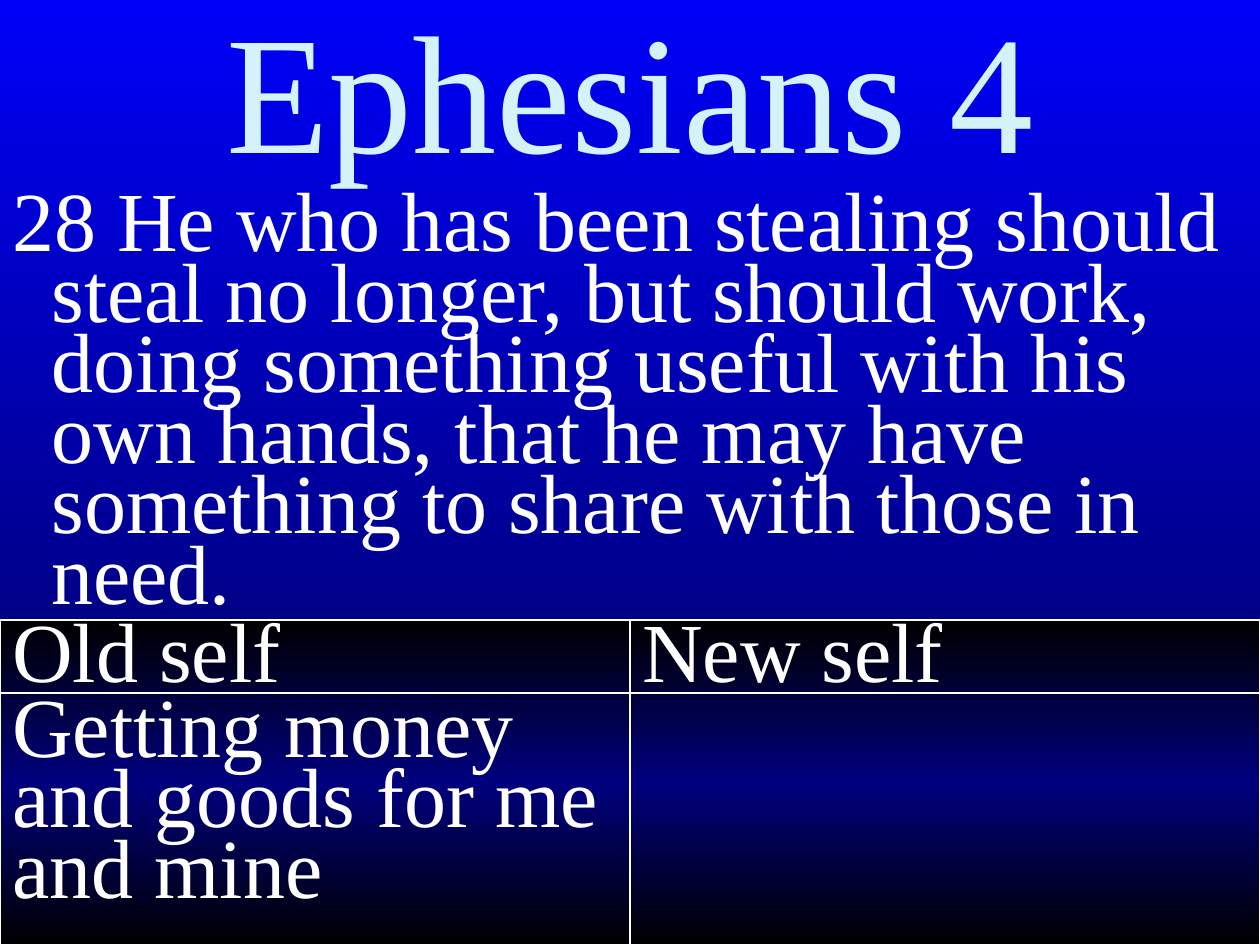
"""Build the Ephesians 4 slide comparing the old self with the new self."""
from lxml.etree import SubElement
from pptx import Presentation
from pptx.dml.color import RGBColor
from pptx.enum.shapes import MSO_CONNECTOR, MSO_SHAPE
from pptx.enum.text import MSO_ANCHOR, MSO_AUTO_SIZE, PP_ALIGN
from pptx.oxml.ns import qn
from pptx.util import Inches, Pt

COLORS = {
    "title": "D3F3F9",
    "text": "FFFFFF",
    "sky": "0000F8",
    "night": "00004A",
    "edge": "000000",
    "glow": "00007E",
}
FONT = "Times New Roman"
VERSE = (
    "28 He who has been stealing should steal no longer, but should work, "
    "doing something useful with his own hands, that he may have something "
    "to share with those in need."
)
COLUMNS = [
    ["Old self", "Getting money and goods for me and mine"],
    ["New self"],
]
COLUMN_WIDTH = 5
COLUMN_TOP = 4.92
HEADER_BOTTOM = 5.5


def color(name):
    """Return the named colour."""
    return RGBColor.from_string(COLORS[name])


def set_gradient(fill, element, names):
    """Fill from top to bottom with evenly spaced colours."""
    fill.gradient()
    fill.gradient_angle = 270
    stops = next(element.iter(qn("a:gsLst")))
    for stop in list(stops):
        stops.remove(stop)
    for index, name in enumerate(names):
        position = str(100000 * index // (len(names) - 1))
        stop = SubElement(stops, qn("a:gs"), pos=position)
        SubElement(stop, qn("a:srgbClr"), val=COLORS[name])


def write_text(shape, lines, size=48, name="text", spacing=0.7,
               align=PP_ALIGN.LEFT, anchor=MSO_ANCHOR.TOP):
    """Write one formatted paragraph per line."""
    frame = shape.text_frame
    frame.text = "\n".join(lines)
    frame.word_wrap = True
    frame.auto_size = MSO_AUTO_SIZE.NONE
    frame.vertical_anchor = anchor
    for paragraph in frame.paragraphs:
        paragraph.alignment = align
        paragraph.line_spacing = spacing
        paragraph.space_before = Pt(size * 0.05)
        for run in paragraph.runs:
            run.font.name = FONT
            run.font.size = Pt(size)
            run.font.color.rgb = color(name)


def add_title(slide, text):
    """Place and format the title."""
    title = slide.shapes.title
    title.left, title.top = Inches(0), Inches(0)
    title.width, title.height = Inches(10), Inches(1.67)
    write_text(title, [text], 96, "title", 0.8, PP_ALIGN.CENTER, MSO_ANCHOR.MIDDLE)
    title.text_frame.paragraphs[0].space_before = Pt(0)


def add_verse(slide, text):
    """Add the verse with a hanging indent."""
    box = slide.shapes.add_textbox(Inches(0), Inches(1.5), Inches(10), Inches(5.33))
    write_text(box, [text])
    properties = box.text_frame.paragraphs[0]._p.get_or_add_pPr()
    properties.set("marL", str(Inches(0.31)))
    properties.set("indent", str(-Inches(0.31)))


def add_column(slide, index, lines):
    """Add one column of the comparison."""
    column = slide.shapes.add_shape(
        MSO_SHAPE.RECTANGLE, Inches(index * COLUMN_WIDTH), Inches(COLUMN_TOP),
        Inches(COLUMN_WIDTH), Inches(7.5 - COLUMN_TOP))
    column.shadow.inherit = False
    set_gradient(column.fill, column._element, ["edge", "glow", "edge"])
    column.line.color.rgb = color("text")
    column.line.width = Pt(1)
    write_text(column, lines)


def add_header_rule(slide):
    """Add the line below the column headers."""
    rule = slide.shapes.add_connector(
        MSO_CONNECTOR.STRAIGHT, Inches(0), Inches(HEADER_BOTTOM),
        Inches(10), Inches(HEADER_BOTTOM))
    rule.line.color.rgb = color("text")
    rule.line.width = Pt(1.5)
    SubElement(rule._element.spPr, qn("a:effectLst"))


def main():
    """Build and save the presentation."""
    presentation = Presentation()
    presentation.slide_width = Inches(10)
    presentation.slide_height = Inches(7.5)
    slide = presentation.slides.add_slide(presentation.slide_layouts[5])
    set_gradient(slide.background.fill, slide._element, ["sky", "night"])
    add_title(slide, "Ephesians 4")
    add_verse(slide, VERSE)
    for index, lines in enumerate(COLUMNS):
        add_column(slide, index, lines)
    add_header_rule(slide)
    presentation.save("out.pptx")


if __name__ == "__main__":
    main()
